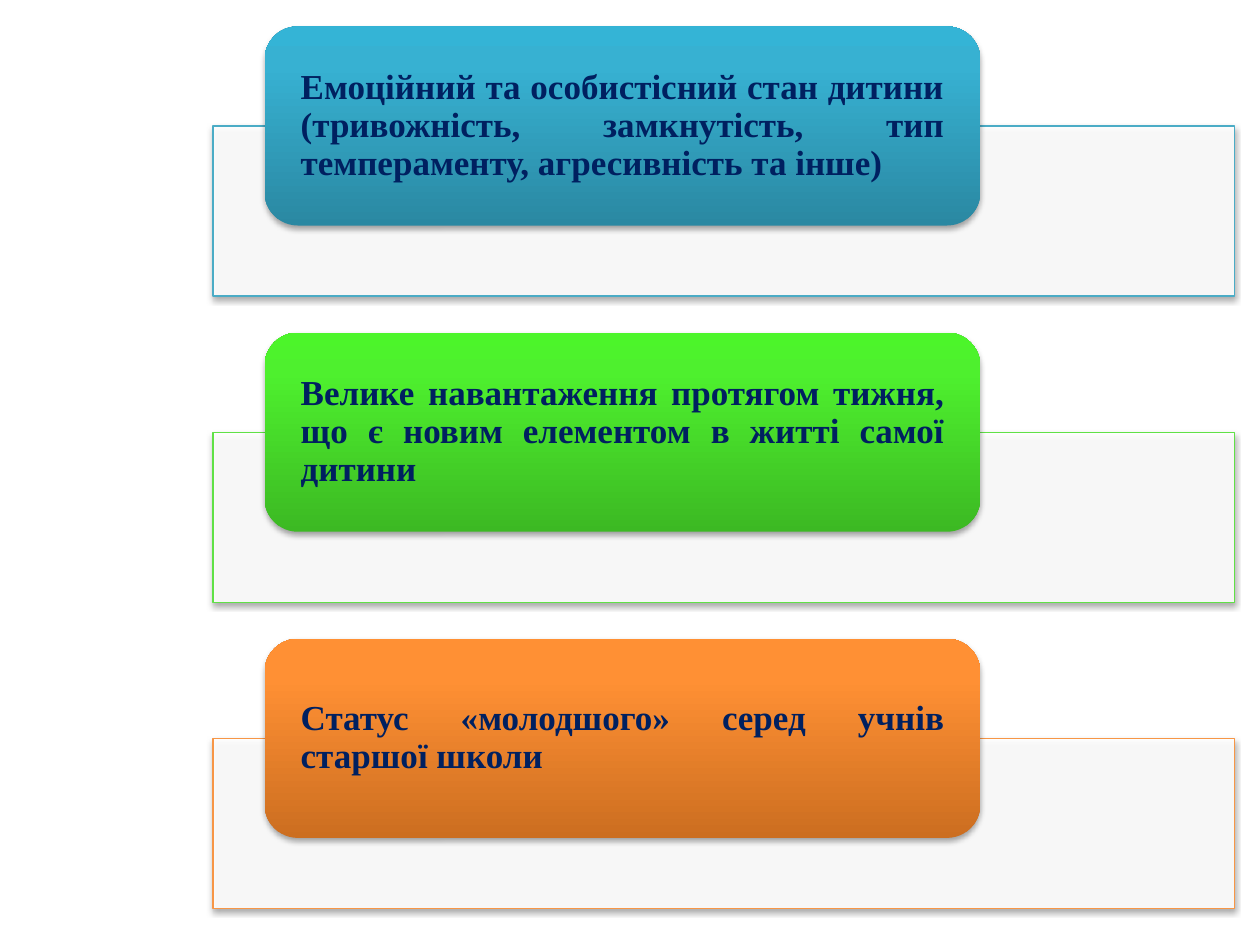
"""Build a slide with three coloured cards, each overlapping a pale panel."""
from pptx import Presentation
from pptx.dml.color import RGBColor
from pptx.enum.shapes import MSO_SHAPE
from pptx.enum.text import MSO_ANCHOR, PP_ALIGN
from pptx.oxml import parse_xml
from pptx.oxml.ns import nsdecls, qn
from pptx.util import Inches, Pt

RECT, ROUND = MSO_SHAPE.RECTANGLE, MSO_SHAPE.ROUNDED_RECTANGLE
MIDDLE, JUSTIFY = MSO_ANCHOR.MIDDLE, PP_ALIGN.JUSTIFY
WHITE = RGBColor(0xFF, 0xFF, 0xFF)
NAVY = RGBColor(0x00, 0x20, 0x60)
BLUE = RGBColor(0x4B, 0xAC, 0xC6)
GREEN = RGBColor(0x60, 0xE1, 0x46)
ORANGE = RGBColor(0xF7, 0x96, 0x46)
BLUE_STOPS = (RGBColor(0x2A, 0x88, 0xA2), RGBColor(0x37, 0xB1, 0xD2), RGBColor(0x34, 0xB4, 0xD6))
GREEN_STOPS = (RGBColor(0x3C, 0xB9, 0x23), RGBColor(0x4E, 0xF0, 0x2E), RGBColor(0x4C, 0xF5, 0x2A))
ORANGE_STOPS = (RGBColor(0xCC, 0x6E, 0x20), RGBColor(0xFF, 0x90, 0x34), RGBColor(0xFF, 0x91, 0x36))
STOP_POSITIONS = (0, 80000, 100000)
TOP, STEP = 0.21, 2.43

CARDS = [
    ("Емоційний та особистісний стан дитини (тривожність, замкнутість, "
     "тип темпераменту, агресивність та інше)", BLUE, BLUE_STOPS),
    ("Велике навантаження протягом тижня, що є новим елементом в житті самої дитини",
     GREEN, GREEN_STOPS),
    ("Статус «молодшого» серед учнів старшої школи", ORANGE, ORANGE_STOPS),
]


def add_shadowed(s, kind, left, top, width, height):
    """Add a preset shape with a soft shadow below it."""
    sp = s.shapes.add_shape(kind, Inches(left), Inches(top), Inches(width), Inches(height))
    sp.shadow.inherit = False
    sp._element.spPr.find(qn("a:effectLst")).append(parse_xml(
        f'<a:outerShdw {nsdecls("a")} blurRad="40000" dist="23000" dir="5400000" rotWithShape="0">'
        '<a:srgbClr val="000000"><a:alpha val="35000"/></a:srgbClr></a:outerShdw>'))
    return sp


def fill_gradient(sp, colors):
    """Fill a shape with a gradient running from bottom to top."""
    stops = "".join(f'<a:gs pos="{pos}"><a:srgbClr val="{color}"/></a:gs>'
                    for pos, color in zip(STOP_POSITIONS, colors))
    sp._element.spPr.find(qn("a:prstGeom")).addnext(parse_xml(
        f'<a:gradFill {nsdecls("a")} rotWithShape="1"><a:gsLst>{stops}</a:gsLst>'
        '<a:lin ang="16200000" scaled="0"/></a:gradFill>'))


prs = Presentation()
prs.slide_width, prs.slide_height = Inches(10), Inches(7.5)
s = prs.slides.add_slide(prs.slide_layouts[6])

for i, (text, line_color, stop_colors) in enumerate(CARDS):
    top = TOP + i * STEP

    panel = add_shadowed(s, RECT, 1.69, top + 0.79, 8.11, 1.35)
    panel.fill.solid()
    panel.fill.fore_color.rgb = WHITE
    panel._element.spPr.find(qn("a:solidFill"))[0].append(
        parse_xml(f'<a:alpha {nsdecls("a")} val="90000"/>'))
    panel.line.color.rgb = line_color
    panel.line.width = Pt(0.75)

    card = add_shadowed(s, ROUND, 2.1, top, 5.68, 1.58)
    card.line.fill.background()
    fill_gradient(card, stop_colors)

    tf = card.text_frame
    tf.word_wrap = True
    tf.vertical_anchor = MIDDLE
    tf.margin_left = tf.margin_right = Inches(0.21)
    tf.margin_top = tf.margin_bottom = 0
    p = tf.paragraphs[0]
    p.alignment = JUSTIFY
    p.line_spacing = 0.9
    r = p.add_run()
    r.text = text
    r.font.name = "Times New Roman"
    r.font.size = Pt(20)
    r.font.bold = True
    r.font.color.rgb = NAVY

prs.save("out.pptx")
